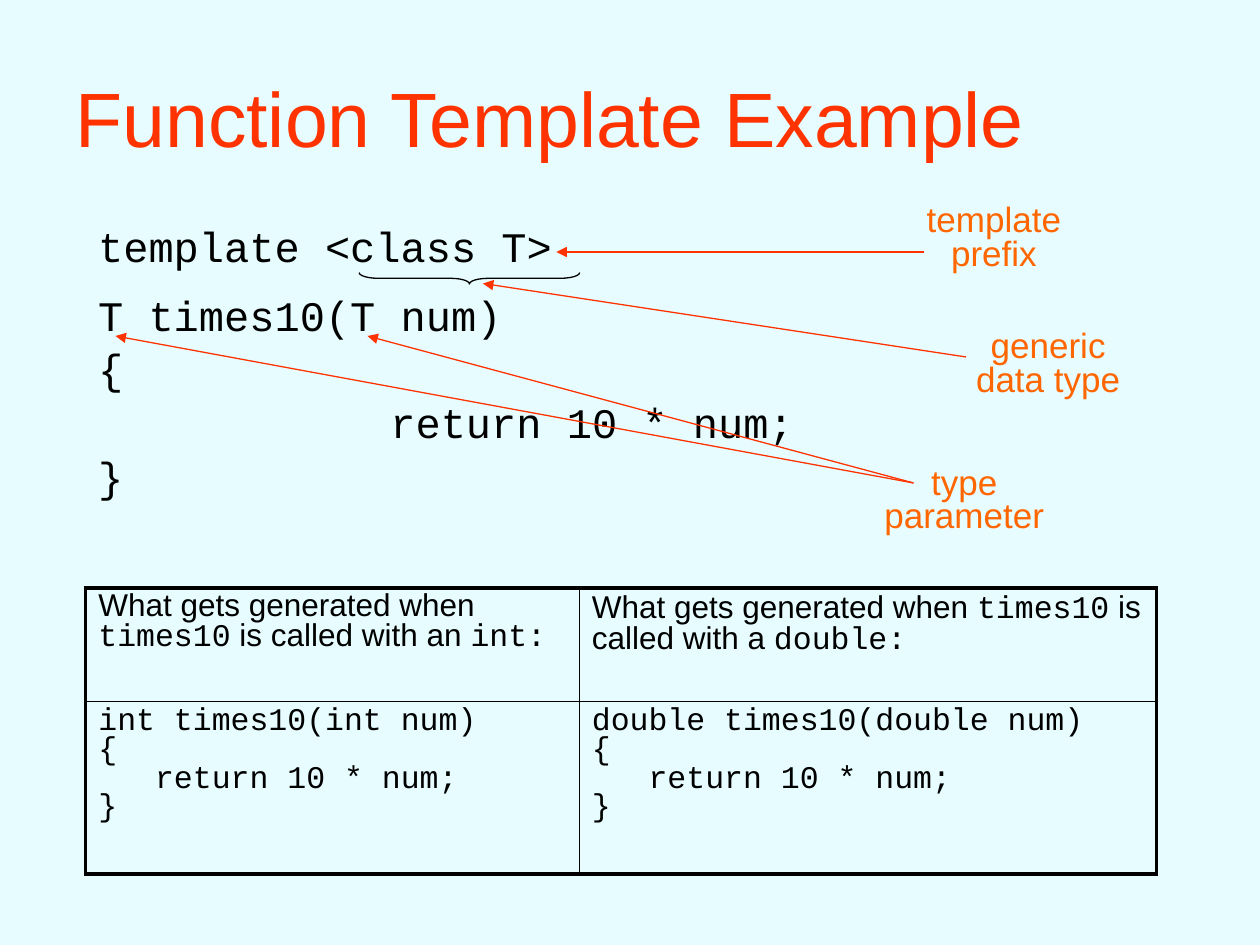
from dataclasses import dataclass

from lxml import etree
from pptx import Presentation
from pptx.dml.color import RGBColor
from pptx.enum.shapes import MSO_CONNECTOR, MSO_SHAPE
from pptx.enum.text import MSO_ANCHOR, MSO_AUTO_SIZE, PP_ALIGN
from pptx.oxml.ns import qn
from pptx.util import Pt

STRAIGHT = MSO_CONNECTOR.STRAIGHT
LEFT_BRACE = MSO_SHAPE.LEFT_BRACE
MIDDLE = MSO_ANCHOR.MIDDLE
FIT_SHAPE = MSO_AUTO_SIZE.SHAPE_TO_FIT_TEXT
LEFT, CENTER = PP_ALIGN.LEFT, PP_ALIGN.CENTER
TITLE_ONLY = 5


@dataclass(frozen=True)
class Theme:
    background: str = "E6FCFE"
    accent: str = "FF3300"
    label: str = "FF6600"
    text: str = "000000"
    sans: str = "Arial"
    mono: str = "Courier New"
    title_size: float = 44
    code_size: float = 24
    label_size: float = 20
    table_size: float = 18
    thin: float = 0.75
    inner_border: float = 1
    outer_border: float = 2.25


THEME = Theme()


def set_font(font, name, size, color):
    font.name = name
    font.size = Pt(size)
    font.color.rgb = RGBColor.from_string(color)


def set_indent(paragraph, indent):
    properties = paragraph._p.get_or_add_pPr()
    properties.set("marL", str(Pt(indent)))
    properties.set("indent", "0")


def next_paragraph(frame, index):
    return frame.add_paragraph() if index else frame.paragraphs[0]


def add_title(slide, text):
    title = slide.shapes.title
    title.left, title.top, title.width, title.height = Pt(36), Pt(21.6), Pt(648), Pt(90)
    title.text_frame.text = text
    title.text_frame.vertical_anchor = MIDDLE
    paragraph = title.text_frame.paragraphs[0]
    paragraph.alignment = LEFT
    set_font(paragraph.font, THEME.sans, THEME.title_size, THEME.accent)


def add_code(slide, lines):
    frame = slide.shapes.add_textbox(Pt(13), Pt(126), Pt(653), Pt(360)).text_frame
    frame.word_wrap = True
    for index, (text, indent, space_before) in enumerate(lines):
        paragraph = next_paragraph(frame, index)
        paragraph.text = text
        paragraph.line_spacing = 0.9
        paragraph.space_before = Pt(space_before)
        set_indent(paragraph, indent)
        set_font(paragraph.font, THEME.mono, THEME.code_size, THEME.text)


def add_label(slide, left, top, width, lines):
    frame = slide.shapes.add_textbox(Pt(left), Pt(top), Pt(width), Pt(46)).text_frame
    frame.word_wrap = False
    frame.auto_size = FIT_SHAPE
    for index, text in enumerate(lines):
        paragraph = next_paragraph(frame, index)
        paragraph.text = text
        paragraph.alignment = CENTER
        paragraph.line_spacing = 0.8
        set_font(paragraph.font, THEME.sans, THEME.label_size, THEME.label)


def add_arrow(slide, start, end):
    arrow = slide.shapes.add_connector(STRAIGHT, *map(Pt, start + end))
    arrow.line.color.rgb = RGBColor.from_string(THEME.accent)
    arrow.line.width = Pt(THEME.thin)
    etree.SubElement(arrow.line._get_or_add_ln(), qn("a:tailEnd"), type="triangle")
    etree.SubElement(arrow._element.spPr, qn("a:effectLst"))


def add_brace(slide):
    brace = slide.shapes.add_shape(LEFT_BRACE, Pt(265), Pt(96), Pt(6.5), Pt(126))
    brace.rotation = 270
    brace.adjustments[0] = 1.68
    brace.adjustments[1] = 0.5
    brace.shadow.inherit = False
    brace.fill.background()
    brace.line.color.rgb = RGBColor.from_string(THEME.text)
    brace.line.width = Pt(THEME.thin)


def set_borders(cell, is_outer):
    properties = cell._tc.get_or_add_tcPr()
    for position, (side, outer) in enumerate(is_outer.items()):
        width = THEME.outer_border if outer else THEME.inner_border
        line = etree.Element(qn(f"a:{side}"), w=str(Pt(width)))
        fill = etree.SubElement(line, qn("a:solidFill"))
        etree.SubElement(fill, qn("a:srgbClr"), val=THEME.text)
        properties.insert(position, line)


def fill_heading(cell, parts):
    paragraph = cell.text_frame.paragraphs[0]
    paragraph.line_spacing = 0.8
    for text, font_name in parts:
        run = paragraph.add_run()
        run.text = text
        set_font(run.font, font_name, THEME.table_size, THEME.text)


def fill_code(cell, lines):
    for index, (text, indent) in enumerate(lines):
        paragraph = next_paragraph(cell.text_frame, index)
        paragraph.text = text
        paragraph.line_spacing = 0.8
        set_indent(paragraph, indent)
        set_font(paragraph.font, THEME.mono, THEME.table_size, THEME.text)


def add_comparison(slide, versions):
    frame = slide.shapes.add_table(2, 2, Pt(49), Pt(336), Pt(612), Pt(163.5))
    table = frame.table
    for column, width in zip(table.columns, (282, 330)):
        column.width = Pt(width)
    for row, height in zip(table.rows, (65, 98.5)):
        row.height = Pt(height)
    for column, (article, type_name) in enumerate(versions):
        fill_heading(table.cell(0, column), [
            ("What gets generated when ", THEME.sans),
            ("times10", THEME.mono),
            (f" is called with {article} ", THEME.sans),
            (f"{type_name}:", THEME.mono),
        ])
        fill_code(table.cell(1, column), [
            (f"{type_name} times10({type_name} num)", 0),
            ("{", 0),
            ("return 10 * num;", 32.4),
            ("}", 0),
        ])
        for row in range(2):
            cell = table.cell(row, column)
            cell.fill.background()
            set_borders(cell, {"lnL": column == 0, "lnR": column == 1,
                               "lnT": row == 0, "lnB": row == 1})


def main():
    presentation = Presentation()
    presentation.slide_width, presentation.slide_height = Pt(720), Pt(540)
    slide = presentation.slides.add_slide(presentation.slide_layouts[TITLE_ONLY])
    slide.background.fill.solid()
    slide.background.fill.fore_color.rgb = RGBColor.from_string(THEME.background)

    add_title(slide, "Function Template Example")
    add_code(slide, [
        ("template <class T>", 36, 5),
        ("T times10(T num)", 36, 13),
        ("{", 36, 4.8),
        ("return 10 * num;", 203, 4.8),
        ("}", 36, 4.8),
    ])
    add_label(slide, 520, 114, 96, ["template", "prefix"])
    add_label(slide, 548, 186, 102, ["generic", "data type"])
    add_label(slide, 496, 264, 110, ["type", "parameter"])
    add_brace(slide)
    for start, end in (
        ((528, 144), (318, 144)),
        ((552, 204), (276, 162)),
        ((522, 276), (210, 192)),
        ((522, 276), (66, 192)),
    ):
        add_arrow(slide, start, end)
    add_comparison(slide, [("an", "int"), ("a", "double")])
    presentation.save("out.pptx")


if __name__ == "__main__":
    main()
